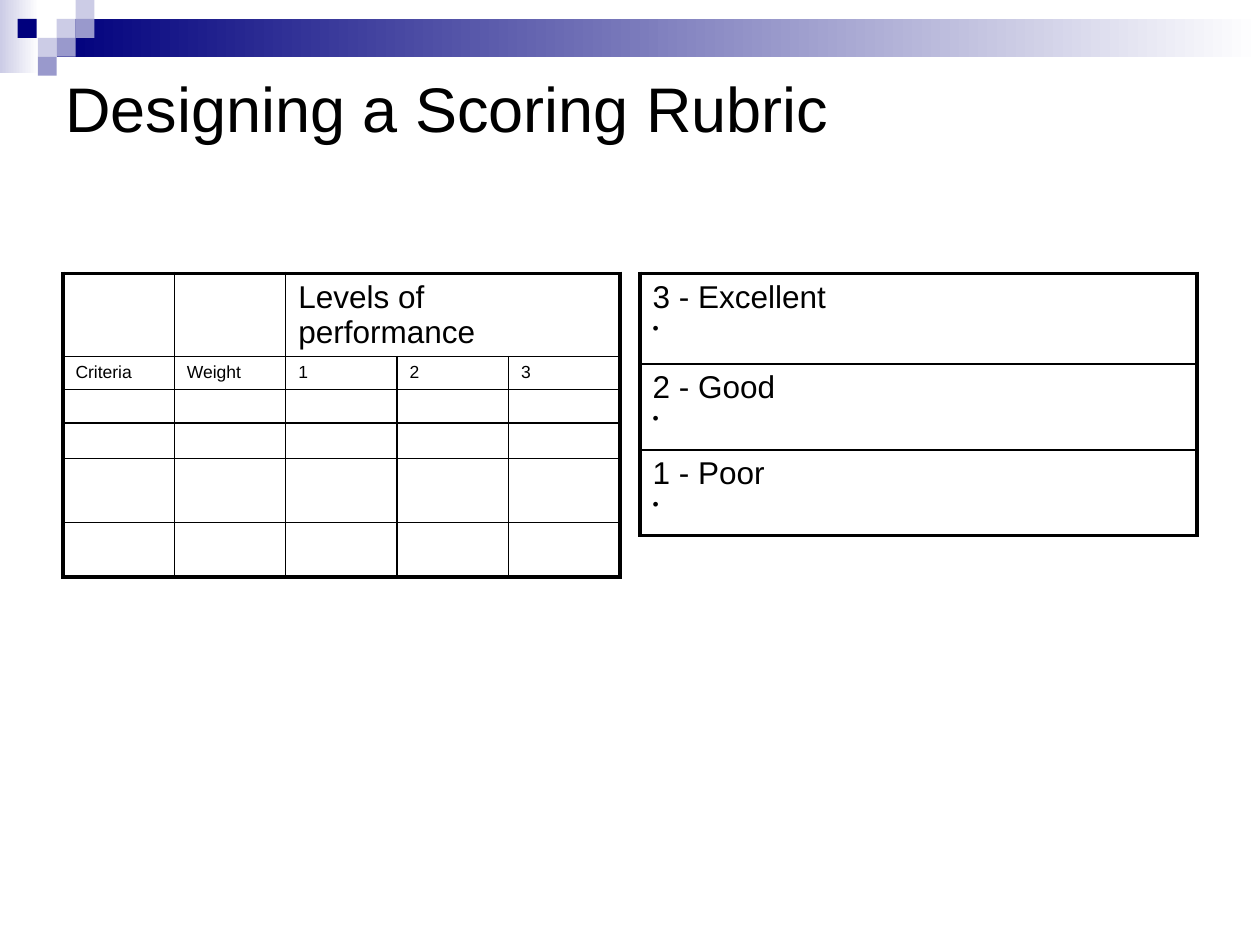
from lxml import etree
from pptx import Presentation
from pptx import util as u
from pptx.dml.color import RGBColor
from pptx.enum import shapes
from pptx.oxml import ns

NAVY = RGBColor(0x00, 0x00, 0x7D)
LILAC = RGBColor(0xCC, 0xCC, 0xE6)
VIOLET = RGBColor(0x99, 0x99, 0xCC)
WHITE = RGBColor(0xFF, 0xFF, 0xFF)
BLACK = RGBColor(0x00, 0x00, 0x00)

deck = Presentation()
deck.slide_width, deck.slide_height = u.Inches(10), u.Inches(7.5)
slide = deck.slides.add_slide(deck.slide_layouts[6])


def write(para, words, size):
    run = para.add_run()
    run.text = words
    run.font.size = u.Pt(size)
    run.font.name = "Arial"
    run.font.color.rgb = BLACK


def grid(left, wide, highs, texts, merge=None):
    rows, cols = len(highs), len(texts[0])
    table = slide.shapes.add_table(
        rows, cols, u.Inches(left), u.Inches(2.17),
        u.Inches(wide), u.Inches(sum(highs))).table
    table.first_row = table.horz_banding = False
    for row, high in zip(table.rows, highs):
        row.height = u.Inches(high)
    if merge:
        table.cell(*merge[0]).merge(table.cell(*merge[1]))
    for r in range(rows):
        for c in range(cols):
            cell = table.cell(r, c)
            if cell.is_spanned:
                continue
            span = cell.span_width if cell.is_merge_origin else 1
            props = cell._tc.get_or_add_tcPr()
            outer = {"L": c == 0, "R": c + span == cols, "T": r == 0, "B": r == rows - 1}
            for side, thick in outer.items():
                line = etree.SubElement(props, ns.qn("a:ln" + side),
                                        w=str(u.Pt(2.25 if thick else 1)))
                fill = etree.SubElement(line, ns.qn("a:solidFill"))
                etree.SubElement(fill, ns.qn("a:srgbClr"), val=str(BLACK))
            cell.fill.background()
            frame = cell.text_frame
            parts = texts[r][c]
            for i, (words, size) in enumerate(parts):
                para = frame.add_paragraph() if i else frame.paragraphs[0]
                para.space_before = u.Pt(2 if i else 0)
                write(para, words, size)
            if not parts:
                etree.SubElement(frame.paragraphs[0]._p, ns.qn("a:endParaRPr"), sz="1000")


bars = [(0, 0, 0.31, 0.58, LILAC), (0.45, 0.15, 9.55, 0.3, NAVY)]
tiles = [(0.45, 0.15, LILAC), (0.6, 0, LILAC), (0.6, 0.15, VIOLET), (0.3, 0.3, LILAC),
         (0.14, 0.15, NAVY), (0.45, 0.3, VIOLET), (0.3, 0.45, VIOLET)]
blocks = bars + [(x, y, 0.15, 0.15, hue) for x, y, hue in tiles]
for i, (x, y, w, h, hue) in enumerate(blocks):
    block = slide.shapes.add_shape(
        shapes.MSO_SHAPE.RECTANGLE, u.Inches(x), u.Inches(y), u.Inches(w), u.Inches(h))
    block.shadow.inherit = False
    block.line.fill.background()
    if i < len(bars):
        block.fill.gradient()
        block.fill.gradient_angle = 0
        for stop, tint in zip(block.fill.gradient_stops, (hue, WHITE)):
            stop.color.rgb = tint
            stop.position = 0 if tint == hue else 1
    else:
        block.fill.solid()
        block.fill.fore_color.rgb = hue

heads = [[(words, 10)] for words in ("Criteria", "Weight", "1", "2", "3")]
top = [[], [], [("Levels of performance", 18)], [], []]
blank = [[] for _ in heads]
grid(0.5, 4.42, (0.66, 0.26, 0.25, 0.28, 0.51, 0.43),
     [top, heads] + [blank] * 4, ((0, 2), (0, 4)))

title = slide.shapes.add_textbox(u.Inches(0.42), u.Inches(0.5), u.Inches(9), u.Inches(1.21))
title.text_frame.word_wrap = True
para = title.text_frame.paragraphs[0]
para.space_before = u.Pt(4)
write(para, "Designing a Scoring Rubric", 36)

grades = ("3 - Excellent", "2 - Good", "1 - Poor")
grid(5.08, 4.42, (0.72, 0.68, 0.68), [[[(grade, 18), ("•", 10)]] for grade in grades])

deck.save("out.pptx")
